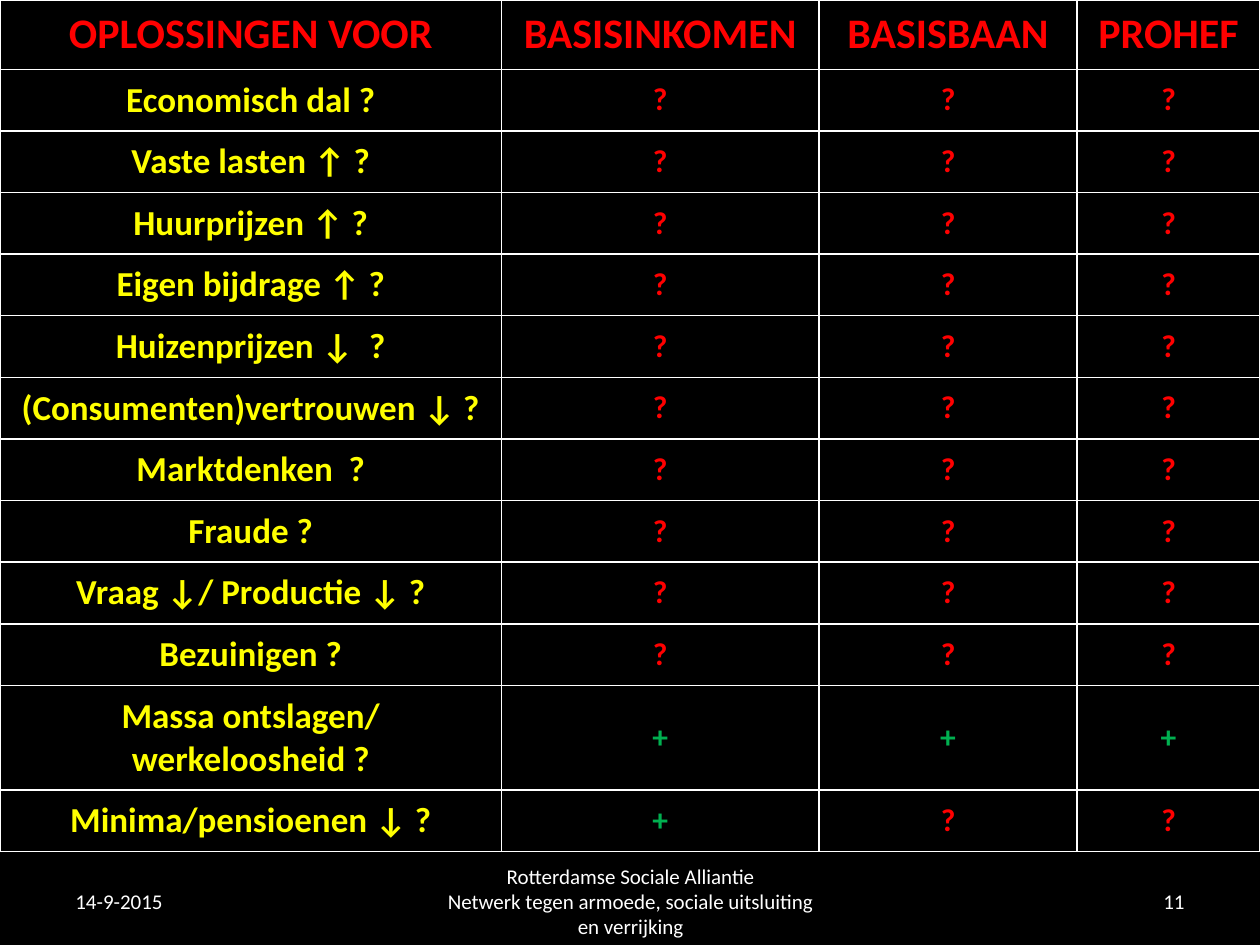
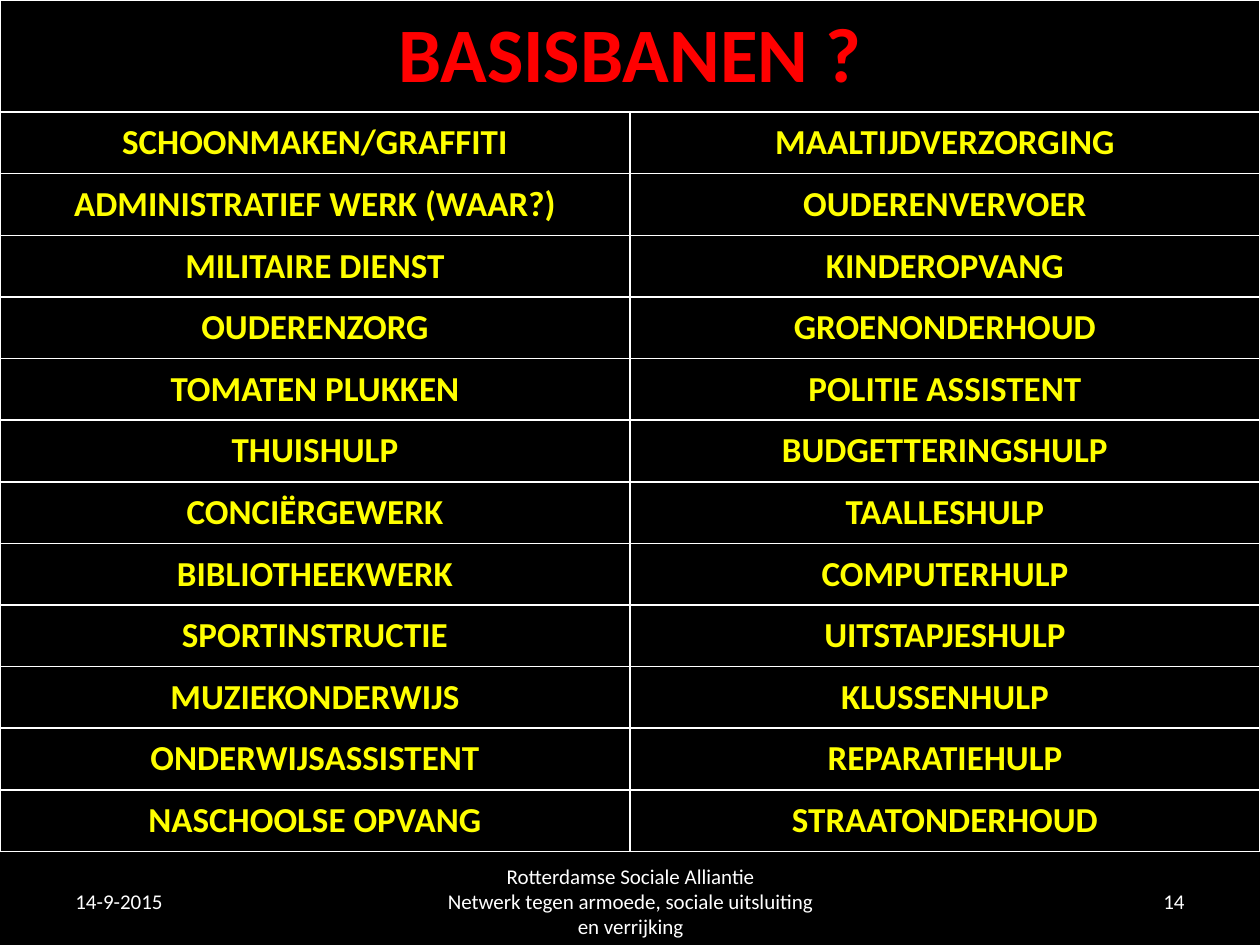
"""Build two black table slides on solutions and basic jobs."""
import pptx
import pptx.dml.color
import pptx.enum.text
import pptx.oxml
import pptx.oxml.ns
import pptx.util

COLORS = {"black": "000000", "white": "FFFFFF", "red": "FF0000", "yellow": "FFFF00", "green": "00B050"}
FONT = "Calibri"
SLIDE_WIDTH, SLIDE_HEIGHT = 10, 7.5
TABLE_HEIGHT = 6.76
CELL_INSETS = {"margin_left": 0.15, "margin_right": 0.15, "margin_top": 0.07, "margin_bottom": 0.07}
FOOTER_TOP, FOOTER_HEIGHT = 6.95, 0.4

DATE = "14-9-2015"
ORGANISATION = "Rotterdamse Sociale Alliantie\nNetwerk tegen armoede, sociale uitsluiting en verrijking"

SOLUTION_HEADINGS = ("OPLOSSINGEN VOOR", "BASISINKOMEN", "BASISBAAN", "PROHEF")
SOLUTIONS = [
    ("Economisch dal ?", "???"),
    ("Vaste lasten ↑ ?", "???"),
    ("Huurprijzen ↑ ?", "???"),
    ("Eigen bijdrage ↑ ?", "???"),
    ("Huizenprijzen ↓  ?", "???"),
    ("(Consumenten)vertrouwen ↓ ?", "???"),
    ("Marktdenken  ?", "???"),
    ("Fraude ?", "???"),
    ("Vraag ↓/ Productie ↓ ?", "???"),
    ("Bezuinigen ?", "???"),
    ("Massa ontslagen/\nwerkeloosheid ?", "+++"),
    ("Minima/pensioenen ↓ ?", "+??"),
]
MARK_COLORS = {"?": "red", "+": "green"}

JOBS_TITLE = "BASISBANEN ?"
JOBS = [
    ("SCHOONMAKEN/GRAFFITI", "MAALTIJDVERZORGING"),
    ("ADMINISTRATIEF WERK (WAAR?)", "OUDERENVERVOER"),
    ("MILITAIRE DIENST", "KINDEROPVANG"),
    ("OUDERENZORG", "GROENONDERHOUD"),
    ("TOMATEN PLUKKEN", "POLITIE ASSISTENT"),
    ("THUISHULP", "BUDGETTERINGSHULP"),
    ("CONCIËRGEWERK", "TAALLESHULP"),
    ("BIBLIOTHEEKWERK", "COMPUTERHULP"),
    ("SPORTINSTRUCTIE", "UITSTAPJESHULP"),
    ("MUZIEKONDERWIJS", "KLUSSENHULP"),
    ("ONDERWIJSASSISTENT", "REPARATIEHULP"),
    ("NASCHOOLSE OPVANG", "STRAATONDERHOUD"),
]


def inches(length):
    return pptx.util.Inches(length)


def rgb(name):
    return pptx.dml.color.RGBColor.from_string(COLORS[name])


def write_text(frame, text, size=20, color="yellow", bold=True, align="CENTER", first_indent=0):
    for index, line in enumerate(text.split("\n")):
        paragraph = frame.add_paragraph() if index else frame.paragraphs[0]
        paragraph.alignment = getattr(pptx.enum.text.PP_ALIGN, align)
        if first_indent and not index:
            properties = paragraph._p.get_or_add_pPr()
            properties.set("marL", "0")
            properties.set("indent", str(inches(first_indent)))
        run = paragraph.add_run()
        run.text = line
        run.font.name, run.font.size, run.font.bold = FONT, pptx.util.Pt(size), bold
        run.font.color.rgb = rgb(color)


def style_cell(cell):
    for side, inset in CELL_INSETS.items():
        setattr(cell, side, inches(inset))
    cell.vertical_anchor = pptx.enum.text.MSO_ANCHOR.MIDDLE
    properties = cell._tc.get_or_add_tcPr()
    for edge in "LRTB":
        properties.append(pptx.oxml.parse_xml(
            f'<a:ln{edge} {pptx.oxml.ns.nsdecls("a")} w="12700"><a:solidFill>'
            f'<a:srgbClr val="{COLORS["white"]}"/></a:solidFill></a:ln{edge}>'))
    cell.fill.solid()
    cell.fill.fore_color.rgb = rgb("black")


def add_table(slide, rows, widths, fixed_heights):
    shared_height = (TABLE_HEIGHT - sum(fixed_heights.values())) / (len(rows) - len(fixed_heights))
    table = slide.shapes.add_table(
        len(rows), len(widths), 0, 0, inches(SLIDE_WIDTH), inches(TABLE_HEIGHT)).table
    for column, width in zip(table.columns, widths):
        column.width = inches(width)
    for index, row in enumerate(rows):
        table.rows[index].height = inches(fixed_heights.get(index, shared_height))
        for position in range(len(widths)):
            style_cell(table.cell(index, position))
        for position, (text, text_format) in enumerate(row):
            write_text(table.cell(index, position).text_frame, text, **text_format)
    return table


def add_slide(presentation, number):
    slide = presentation.slides.add_slide(presentation.slide_layouts[6])
    slide.background.fill.solid()
    slide.background.fill.fore_color.rgb = rgb("black")
    footers = [
        (0.5, 2.33, DATE, {"align": "LEFT"}),
        (3.42, 3.17, ORGANISATION, {"first_indent": -0.7}),
        (7.17, 2.33, str(number), {"align": "RIGHT"}),
    ]
    for left, width, text, text_format in footers:
        frame = slide.shapes.add_textbox(
            inches(left), inches(FOOTER_TOP), inches(width), inches(FOOTER_HEIGHT)).text_frame
        frame.word_wrap = True
        frame.vertical_anchor = pptx.enum.text.MSO_ANCHOR.MIDDLE
        write_text(frame, text, size=12, color="white", bold=False, **text_format)
    return slide


def add_solutions(presentation):
    rows = [[(heading, {"size": 24, "color": "red"}) for heading in SOLUTION_HEADINGS]]
    for problem, marks in SOLUTIONS:
        rows.append([(problem, {})] + [(mark, {"size": 18, "color": MARK_COLORS[mark]}) for mark in marks])
    double_rows = {index: 0.83 for index, row in enumerate(rows) if "\n" in row[0][0]}
    add_table(add_slide(presentation, 11), rows, (3.98, 2.52, 2.05, 1.45), {0: 0.55, **double_rows})


def add_jobs(presentation):
    rows = [[(JOBS_TITLE, {"size": 44, "color": "red"})]]
    rows += [[(job, {}) for job in pair] for pair in JOBS]
    table = add_table(add_slide(presentation, 14), rows, (SLIDE_WIDTH / 2,) * 2, {0: 0.89})
    table.cell(0, 0).merge(table.cell(0, 1))


def main():
    presentation = pptx.Presentation()
    presentation.slide_width, presentation.slide_height = inches(SLIDE_WIDTH), inches(SLIDE_HEIGHT)
    add_solutions(presentation)
    add_jobs(presentation)
    presentation.save("out.pptx")


if __name__ == "__main__":
    main()
